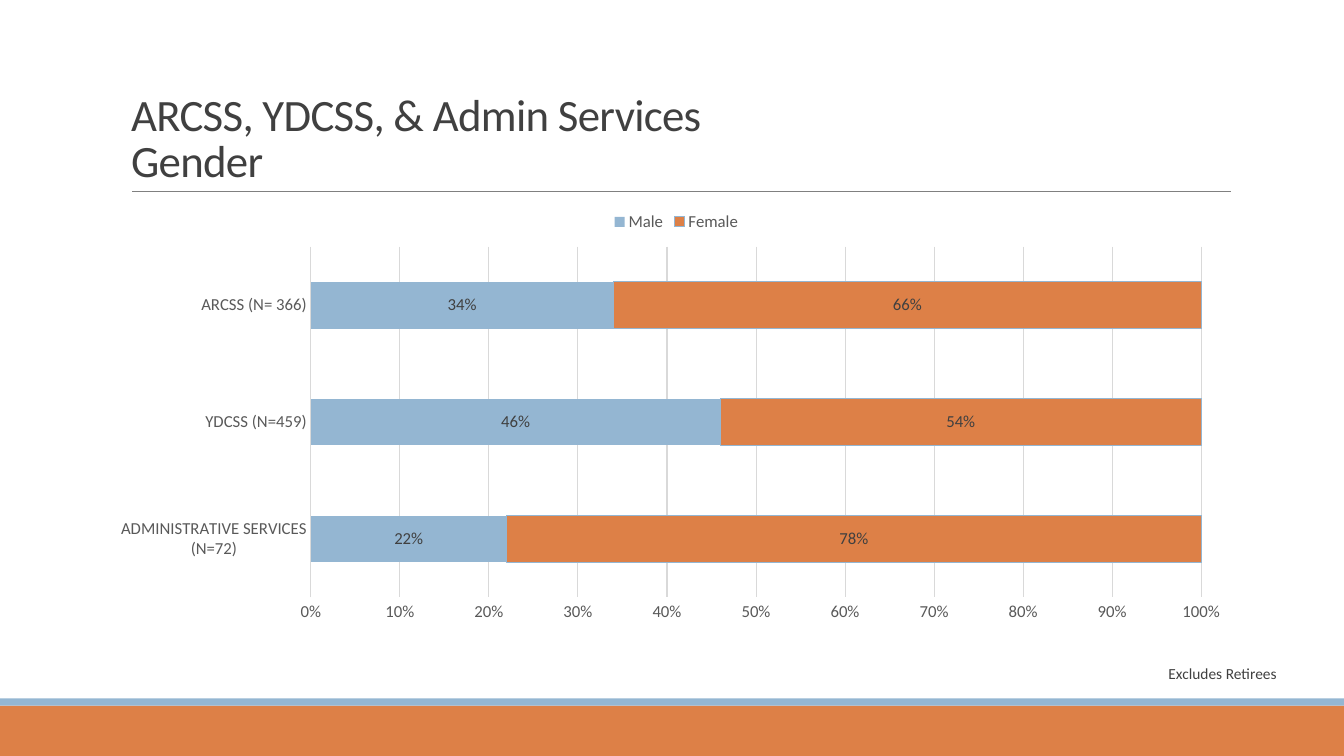
from typing import NamedTuple

from lxml.etree import SubElement, fromstring
from pptx import Presentation
from pptx.chart.data import CategoryChartData
from pptx.dml.color import RGBColor
from pptx.enum.chart import XL_CHART_TYPE, XL_LABEL_POSITION, XL_LEGEND_POSITION, XL_TICK_MARK
from pptx.enum.shapes import MSO_CONNECTOR, MSO_SHAPE
from pptx.enum.text import MSO_ANCHOR, PP_ALIGN
from pptx.oxml.ns import nsdecls, qn
from pptx.util import Inches, Pt

BLUE = RGBColor(0x94, 0xB6, 0xD2)
ORANGE = RGBColor(0xDD, 0x80, 0x47)
DARK = RGBColor(0x40, 0x40, 0x40)
GRAY = RGBColor(0x59, 0x59, 0x59)
RULE = RGBColor(0x80, 0x80, 0x80)
PALE = RGBColor(0xD9, 0xD9, 0xD9)
FACE = "Calibri"
WIDTH = 13.33


class Band(NamedTuple):
    top: float
    height: float
    color: RGBColor


class Group(NamedTuple):
    name: str
    shares: tuple[float, ...]
    color: RGBColor


BANDS = (Band(7, 0.5, ORANGE), Band(6.93, 0.07, BLUE))
UNITS = ("ADMINISTRATIVE SERVICES (N=72)", "YDCSS (N=459)", "ARCSS (N= 366)")
GROUPS = (
    Group("Male", (0.22, 0.46, 0.34), BLUE),
    Group("Female", (0.78, 0.54, 0.66), ORANGE),
)


def style(font, size: float, color: RGBColor) -> None:
    font.name = FACE
    font.size = Pt(size)
    font.color.rgb = color


def add_band(slide, band: Band) -> None:
    shape = slide.shapes.add_shape(
        MSO_SHAPE.RECTANGLE, 0, Inches(band.top), Inches(WIDTH), Inches(band.height)
    )
    shape.shadow.inherit = False
    shape.fill.solid()
    shape.fill.fore_color.rgb = band.color
    shape.line.fill.background()


def add_rule(slide) -> None:
    rule = slide.shapes.add_connector(
        MSO_CONNECTOR.STRAIGHT, Inches(1.31), Inches(1.9), Inches(12.21), Inches(1.9)
    )
    rule.line.color.rgb = RULE
    rule.line.width = Pt(0.5)
    SubElement(rule.element.spPr, qn("a:effectLst"))


def set_title(slide) -> None:
    title = slide.shapes.title
    title.left, title.top = Inches(1.2), Inches(0.31)
    title.width, title.height = Inches(11), Inches(1.59)
    frame = title.text_frame
    frame.text = "ARCSS, YDCSS, & Admin Services\vGender"
    frame.vertical_anchor = MSO_ANCHOR.BOTTOM
    para = frame.paragraphs[0]
    para.alignment = PP_ALIGN.LEFT
    para.line_spacing = 0.85
    style(para.font, 32, DARK)
    for props in title.element.iter(qn("a:defRPr"), qn("a:rPr")):
        props.set("spc", "-50")


def add_note(slide) -> None:
    box = slide.shapes.add_textbox(Inches(11.49), Inches(6.54), Inches(1.98), Inches(0.29))
    box.text_frame.word_wrap = True
    para = box.text_frame.paragraphs[0]
    para.text = "Excludes Retirees"
    style(para.font, 11, DARK)


def set_plot(chart) -> None:
    area = chart.element.find(".//" + qn("c:plotArea"))
    for old in area.findall(qn("c:layout")):
        area.remove(old)
    area.insert(0, fromstring(
        f'<c:layout {nsdecls("c")}><c:manualLayout><c:layoutTarget val="inner"/>'
        '<c:xMode val="edge"/><c:yMode val="edge"/><c:x val="0.17"/><c:y val="0.104"/>'
        '<c:w val="0.804"/><c:h val="0.791"/></c:manualLayout></c:layout>'
    ))


def add_bars(slide) -> None:
    data = CategoryChartData(number_format="0%")
    data.categories = UNITS
    for group in GROUPS:
        data.add_series(group.name, group.shares)
    chart = slide.shapes.add_chart(
        XL_CHART_TYPE.BAR_STACKED_100, Inches(1.2), Inches(1.99), Inches(11), Inches(4.4), data
    ).chart
    style(chart.font, 12, GRAY)
    chart.has_title = False
    chart.has_legend = True
    chart.legend.position = XL_LEGEND_POSITION.TOP
    chart.legend.include_in_layout = False
    style(chart.legend.font, 12, GRAY)

    for axis in (chart.category_axis, chart.value_axis):
        axis.major_tick_mark = axis.minor_tick_mark = XL_TICK_MARK.NONE
        style(axis.tick_labels.font, 12, GRAY)
    chart.category_axis.format.line.color.rgb = PALE
    chart.category_axis.format.line.width = Pt(0.75)
    scale = chart.value_axis
    scale.minimum_scale, scale.maximum_scale, scale.major_unit = 0, 1, 0.1
    scale.format.line.fill.background()
    scale.major_gridlines.format.line.color.rgb = PALE
    scale.major_gridlines.format.line.width = Pt(0.75)
    scale.tick_labels.number_format = "0%"
    scale.tick_labels.number_format_is_linked = False

    plot = chart.plots[0]
    plot.gap_width, plot.overlap = 150, 100
    plot.vary_by_categories = False
    for group, bars in zip(GROUPS, plot.series):
        bars.format.fill.solid()
        bars.format.fill.fore_color.rgb = group.color
        labels = bars.data_labels
        labels.show_value = True
        labels.position = XL_LABEL_POSITION.CENTER
        labels.number_format = "0%"
        labels.number_format_is_linked = False
        style(labels.font, 12, DARK)
    edge = plot.series[1].format.line
    edge.color.rgb = BLUE
    edge.width = Pt(0.75)
    set_plot(chart)


def main() -> None:
    deck = Presentation()
    deck.slide_width, deck.slide_height = Inches(WIDTH), Inches(7.5)
    slide = deck.slides.add_slide(deck.slide_layouts.get_by_name("Title Only"))
    for band in BANDS:
        add_band(slide, band)
    add_rule(slide)
    set_title(slide)
    add_bars(slide)
    add_note(slide)
    deck.save("out.pptx")


if __name__ == "__main__":
    main()
